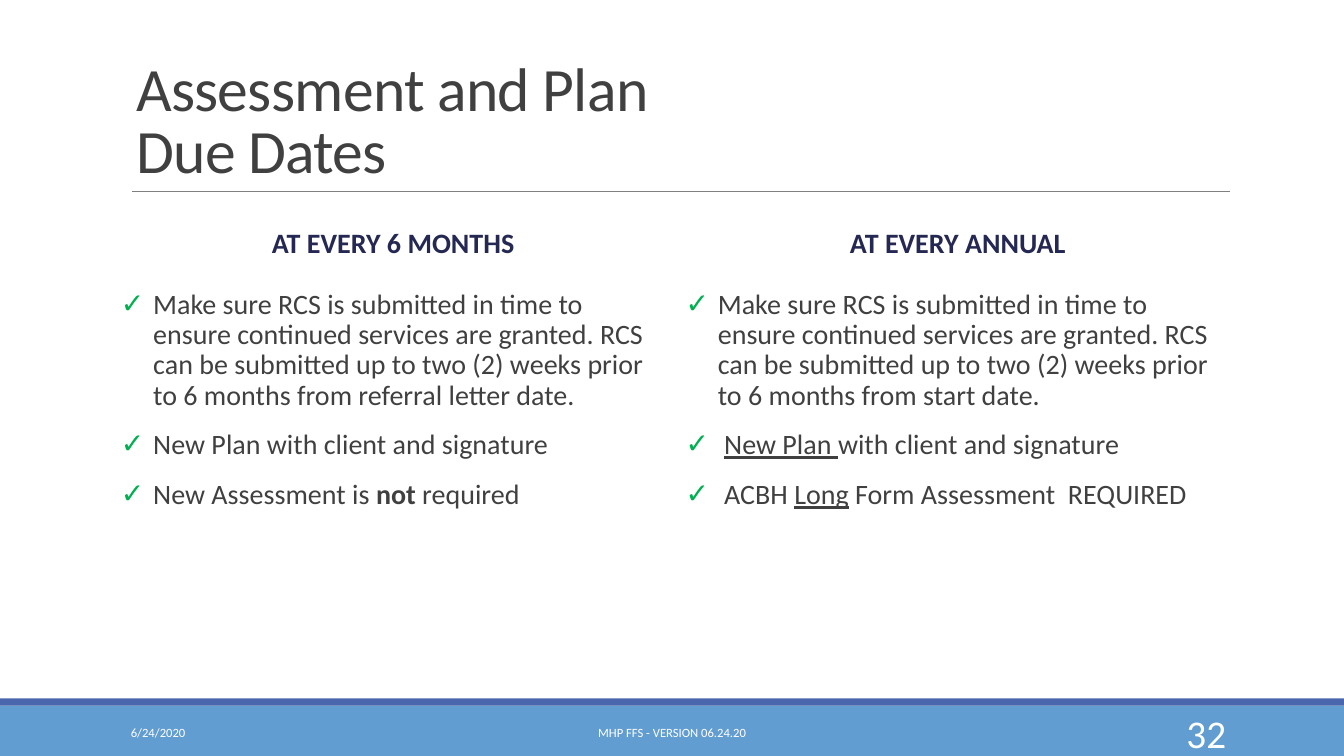
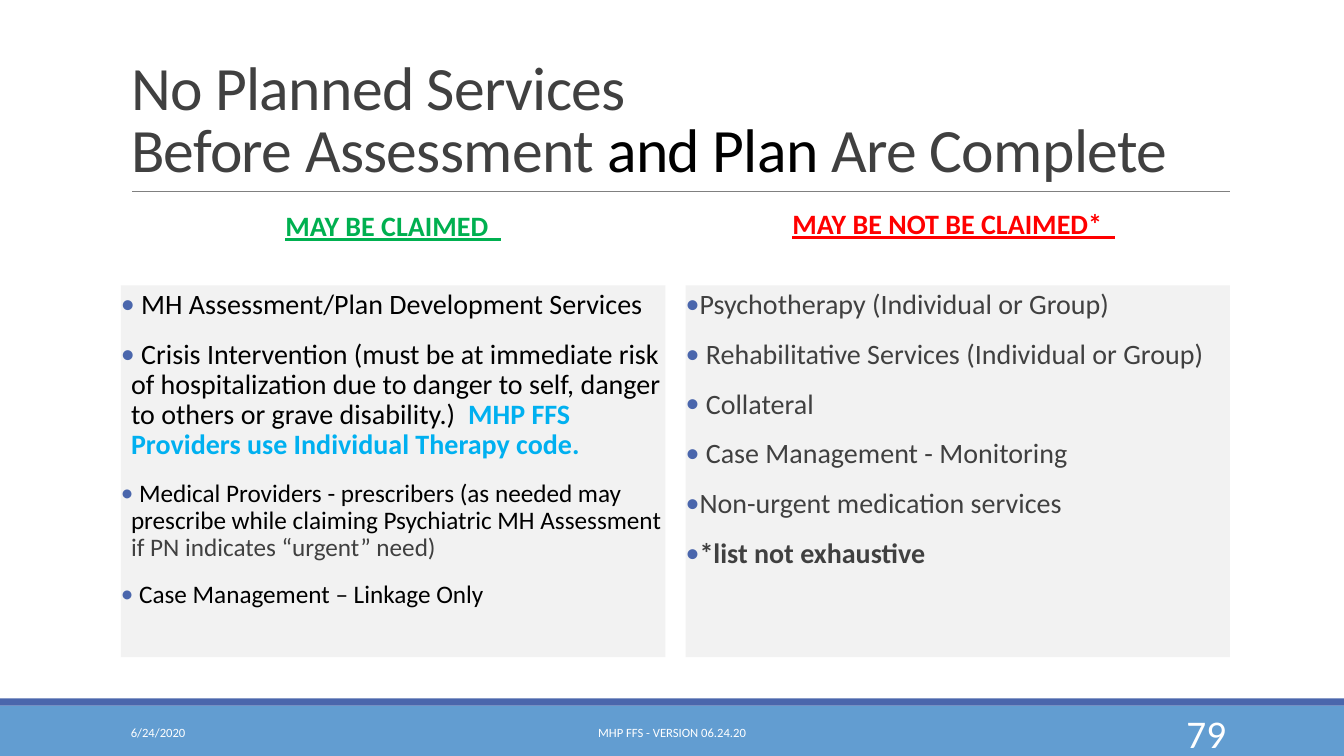
from dataclasses import dataclass

from lxml.etree import SubElement
from pptx import Presentation
from pptx.dml.color import RGBColor
from pptx.enum.shapes import MSO_CONNECTOR, MSO_SHAPE
from pptx.enum.text import MSO_ANCHOR, MSO_AUTO_SIZE, PP_ALIGN
from pptx.oxml.ns import qn
from pptx.util import Inches, Pt


@dataclass(frozen=True)
class Theme:
    font: str = "Calibri"
    text: str = "404040"
    black: str = "000000"
    white: str = "FFFFFF"
    navy: str = "242852"
    accent: str = "4A66AC"
    band: str = "629DD1"
    rule: str = "808080"
    panel: str = "F2F2F2"
    green: str = "00B050"
    red: str = "FF0000"
    sky: str = "00B0F0"
    title_size: int = 44
    body_size: int = 20
    small_size: int = 18
    number_size: int = 28
    footer_size: int = 9


THEME = Theme()
BLACK = {"color": THEME.black}
SMALL_BLACK = {"color": THEME.black, "size": THEME.small_size}
SMALL = {"size": THEME.small_size}
BOLD = {"bold": True}
UNDERLINE = {"underline": True}

COLUMN_LEFTS = (1.2, 6.8)
COLUMN_WIDTH = 5.4
HEADING_HEIGHT = 0.81
BODY_TOP, BODY_HEIGHT = 2.83, 3.69
FOOTER_TOP, FOOTER_HEIGHT = 7.07, 0.4


def write(box, paragraphs, size=THEME.body_size, color=THEME.text, bold=False,
          underline=False, align=PP_ALIGN.LEFT, anchor=MSO_ANCHOR.MIDDLE,
          line_spacing=1.0, before=0, after=0, tracking=0, side_inset=0.1,
          bullet=None, bullet_color=THEME.accent, indent=0):
    """Fill a box; each paragraph is a list of (text, format overrides) spans."""
    frame = box.text_frame
    frame.word_wrap = True
    frame.auto_size = MSO_AUTO_SIZE.NONE
    frame.vertical_anchor = anchor
    frame.margin_left = frame.margin_right = Inches(side_inset)
    frame.margin_top = frame.margin_bottom = Inches(0.05)
    for index, spans in enumerate(paragraphs):
        para = frame.add_paragraph() if index else frame.paragraphs[0]
        para.alignment = align
        para.line_spacing = line_spacing
        para.space_before, para.space_after = Pt(before), Pt(after)
        if bullet:
            properties = para._p.get_or_add_pPr()
            properties.set("marL", str(Inches(indent)))
            properties.set("indent", str(-Inches(indent)))
            tint = SubElement(properties, qn("a:buClr"))
            SubElement(tint, qn("a:srgbClr"), val=bullet_color)
            SubElement(properties, qn("a:buFont"), typeface=THEME.font)
            SubElement(properties, qn("a:buChar"), char=bullet)
        for text, look in spans:
            for line_index, line in enumerate(text.split("\n")):
                if line_index:
                    para.add_line_break()
                span = para.add_run()
                span.text = line
                span.font.name = THEME.font
                span.font.size = Pt(look.get("size", size))
                span.font.color.rgb = RGBColor.from_string(look.get("color", color))
                span.font.bold = look.get("bold", bold)
                span.font.underline = look.get("underline", underline)
                if tracking:
                    span._r.get_or_add_rPr().set("spc", str(int(tracking * 100)))


def add_box(page, left, top, width, height, fill=None, outline=None):
    """Add a rectangle, or a plain text box when it has no fill and no outline."""
    area = [Inches(value) for value in (left, top, width, height)]
    if not (fill or outline):
        return page.shapes.add_textbox(*area)
    box = page.shapes.add_shape(MSO_SHAPE.RECTANGLE, *area)
    box.shadow.inherit = False
    if fill:
        box.fill.solid()
        box.fill.fore_color.rgb = RGBColor.from_string(fill)
    else:
        box.fill.background()
    if outline:
        box.line.color.rgb = RGBColor.from_string(outline)
        box.line.width = Pt(2.25)
    else:
        box.line.fill.background()
    return box


CHECKS = {"bullet": "✓", "bullet_color": THEME.green, "indent": 0.32}
DOTS = {"bullet": "•", "indent": 0.1}

SLIDES = [
    {
        "number": "32",
        "title": [("Assessment and Plan \nDue Dates", {})],
        "title_area": (1.25, 0.31, 10, 1.59),
        "list": CHECKS,
        "panel": THEME.white,
        "heading_outline": THEME.white,
        "columns": [
            {
                "heading": "AT EVERY 6 MONTHS",
                "heading_at": (1.2, 2.02),
                "heading_look": {"color": THEME.navy},
                "items": [
                    [("Make sure RCS is submitted in time to ensure continued services "
                      "are granted. RCS can be submitted up to two (2) weeks prior to "
                      "6 months from referral letter date.", {})],
                    [("New Plan with client and signature", {})],
                    [("New Assessment is ", {}), ("not", BOLD), (" required", {})],
                ],
            },
            {
                "heading": "AT EVERY ANNUAL",
                "heading_at": (6.8, 2.02),
                "heading_look": {"color": THEME.navy},
                "items": [
                    [("Make sure RCS is submitted in time to ensure continued services "
                      "are granted. RCS can be submitted up to two (2) weeks prior to "
                      "6 months from start date.", {})],
                    [(" ", {}), ("New Plan ", UNDERLINE),
                     ("with client and signature", {})],
                    [(" ACBH ", {}), ("Long", UNDERLINE),
                     (" Form Assessment  REQUIRED", {})],
                ],
            },
        ],
    },
    {
        "number": "79",
        "title": [("No Planned Services \nBefore Assessment ", {}),
                  ("and Plan ", BLACK), ("Are Complete", {})],
        "title_area": (1.2, 0.3, 11, 1.59),
        "list": DOTS,
        "panel": THEME.panel,
        "heading_outline": None,
        "columns": [
            {
                "heading": "MAY BE CLAIMED  ",
                "heading_at": (1.2, 1.85),
                "heading_look": {"color": THEME.green, "underline": True},
                "items": [
                    [(" MH Assessment/Plan Development Services", BLACK)],
                    [(" Crisis Intervention (must be at immediate risk of "
                      "hospitalization due to danger to self, danger to others or "
                      "grave disability.)  ", BLACK),
                     ("MHP FFS Providers use Individual Therapy code.",
                      {"color": THEME.sky, "bold": True})],
                    [(" Medical Providers - prescribers (as needed may prescribe "
                      "while claiming Psychiatric MH Assessment ", SMALL_BLACK),
                     ("if PN indicates “urgent” need)", SMALL)],
                    [(" Case Management – Linkage Only", SMALL_BLACK)],
                ],
            },
            {
                "heading": "MAY BE NOT BE CLAIMED*  ",
                "heading_at": (6.76, 1.83),
                "heading_look": {"color": THEME.red, "underline": True},
                "items": [
                    [("Psychotherapy (Individual or Group)", {})],
                    [(" Rehabilitative Services (Individual or Group)", {})],
                    [(" Collateral", {})],
                    [(" Case Management - Monitoring", {})],
                    [("Non-urgent medication services", {})],
                    [("*list not exhaustive", BOLD)],
                ],
            },
        ],
    },
]

deck = Presentation()
deck.slide_width, deck.slide_height = Inches(13.33), Inches(7.5)
title_only = deck.slide_layouts[5]

for content in SLIDES:
    page = deck.slides.add_slide(title_only)

    add_box(page, 0, 7, 13.33, 0.5, fill=THEME.band)
    add_box(page, 0, 6.93, 13.33, 0.07, fill=THEME.accent)
    rule = page.shapes.add_connector(
        MSO_CONNECTOR.STRAIGHT, Inches(1.31), Inches(1.9), Inches(12.2), Inches(1.9))
    rule.line.color.rgb = RGBColor.from_string(THEME.rule)
    rule.line.width = Pt(0.5)
    SubElement(rule._element.spPr, qn("a:effectLst"))

    title = page.shapes.title
    title.left, title.top, title.width, title.height = map(Inches, content["title_area"])
    write(title, [content["title"]], size=THEME.title_size, anchor=MSO_ANCHOR.BOTTOM,
          line_spacing=0.85, tracking=-0.5)

    for left, column in zip(COLUMN_LEFTS, content["columns"]):
        heading = add_box(page, *column["heading_at"], COLUMN_WIDTH, HEADING_HEIGHT,
                          outline=content["heading_outline"])
        write(heading, [[(column["heading"], {})]], bold=True, align=PP_ALIGN.CENTER,
              line_spacing=0.9, before=12, after=2, **column["heading_look"])
        body = add_box(page, left, BODY_TOP, COLUMN_WIDTH, BODY_HEIGHT,
                       fill=content["panel"])
        write(body, column["items"], anchor=MSO_ANCHOR.TOP, side_inset=0,
              line_spacing=0.9, before=12, after=2, **content["list"])

    for left, width, text, size, align in (
        (1.2, 2.7, "6/24/2020", THEME.footer_size, PP_ALIGN.LEFT),
        (4.03, 5.27, "MHP FFS - VERSION 06.24.20", THEME.footer_size, PP_ALIGN.CENTER),
        (10.83, 1.43, content["number"], THEME.number_size, PP_ALIGN.RIGHT),
    ):
        footer = add_box(page, left, FOOTER_TOP, width, FOOTER_HEIGHT)
        write(footer, [[(text, {})]], size=size, color=THEME.white, align=align)

deck.save("out.pptx")
